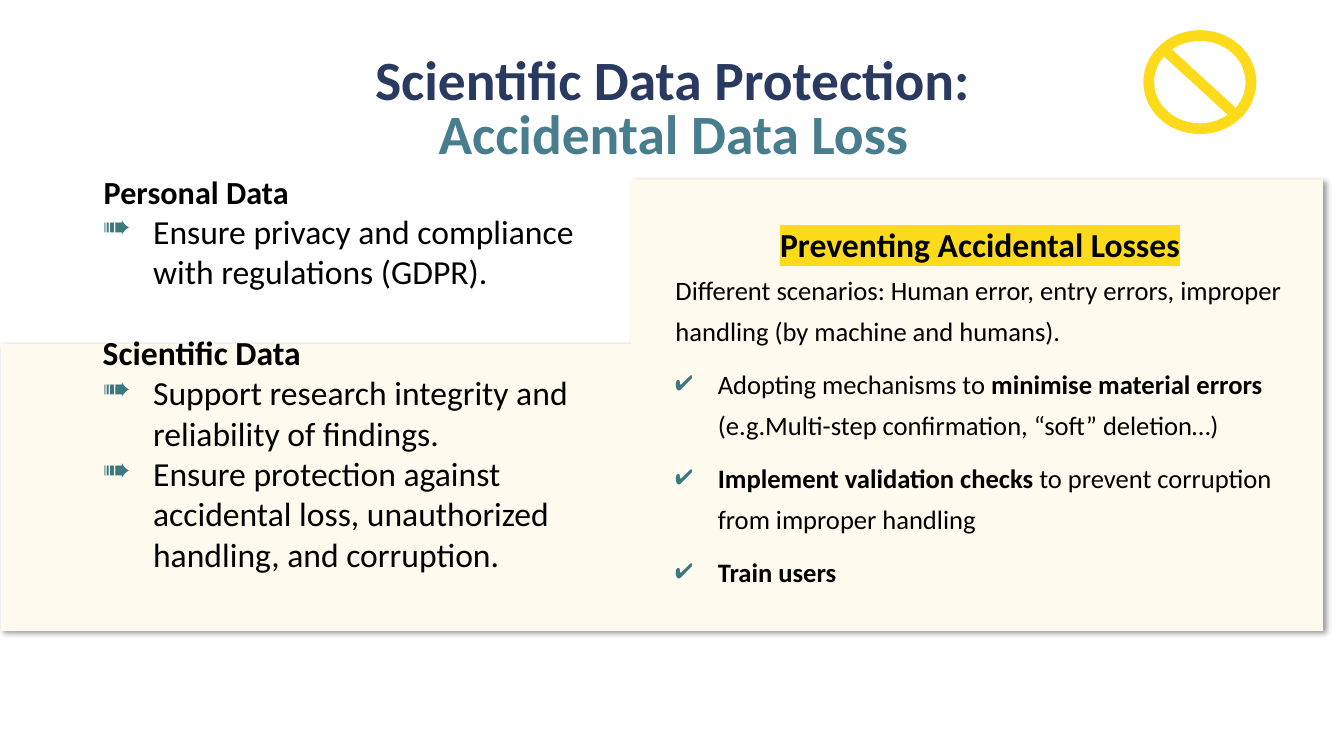
"""Build the slide on protecting scientific data from accidental loss."""
from dataclasses import dataclass

from lxml.etree import SubElement
from pptx import Presentation
from pptx.dml.color import RGBColor as Rgb
from pptx.enum.shapes import MSO_SHAPE as Preset
from pptx.enum.text import MSO_ANCHOR as Anchor, PP_ALIGN as Align
from pptx.oxml import parse_xml
from pptx.oxml.ns import nsdecls, qn
from pptx.shapes.autoshape import Shape
from pptx.slide import Slide
from pptx.text.text import TextFrame
from pptx.util import Inches, Pt


@dataclass(frozen=True)
class Theme:
    font: str = "Calibri"
    navy: str = "2A3960"
    teal: str = "487D8E"
    bullet: str = "3D7780"
    ink: str = "000000"
    cream: str = "FEFAEE"
    yellow: str = "FDDB1B"
    title_size: float = 39.6
    heading_size: float = 23
    body_size: float = 24
    detail_size: float = 19


THEME = Theme()


@dataclass(frozen=True)
class Box:
    left: float
    top: float
    width: float
    height: float

    def lengths(self) -> tuple[int, ...]:
        return tuple(Inches(v) for v in (self.left, self.top, self.width, self.height))


@dataclass(frozen=True)
class Line:
    """One paragraph, with bold parts between asterisks."""
    text: str
    size: float = THEME.body_size
    color: str = THEME.ink
    align: Align = Align.LEFT
    spacing: float = 1.0
    before: float = 0
    margin: float = 0
    bullet: str = ""
    highlight: str = ""


@dataclass(frozen=True)
class TextBlock:
    box: Box
    lines: tuple[Line, ...]
    inset_x: float = 0.1
    inset_y: float = 0.05
    anchor: Anchor = Anchor.TOP


def title(text: str, color: str, left: float, top: float) -> TextBlock:
    heading = Line(f"*{text}*", THEME.title_size, color, Align.CENTER, 0.9)
    return TextBlock(Box(left, top, 10.24, 0.56), (heading,), anchor=Anchor.MIDDLE)


def goal(text: str) -> Line:
    return Line(text, margin=0.5, bullet="➠")


def measure(text: str) -> Line:
    return Line(text, THEME.detail_size, spacing=1.3, before=8, margin=0.42, bullet="✔")


PANEL = Box(0.01, 1.78, 13.11, 4.48)
SIGN = Box(11.34, 0.3, 1.12, 1.03)
BLOCKS = (
    title("Scientific Data Protection:", THEME.navy, 1.55, 0.54),
    title("Accidental Data Loss", THEME.teal, 1.56, 1.07),
    TextBlock(Box(0.92, 1.62, 5.75, 4.63), (
        Line("*Personal Data*", THEME.heading_size, spacing=1.1, margin=0.01),
        goal("Ensure privacy and compliance \nwith regulations (GDPR)."),
        Line("*Scientific Data*", before=29),
        goal("Support research integrity and reliability of findings."),
        goal("Ensure protection against \naccidental loss, unauthorized handling, and corruption."),
    )),
    TextBlock(Box(6.57, 2.07, 6.3, 4.79), (
        Line("*Preventing Accidental Losses*", align=Align.CENTER, spacing=1.2,
             highlight=THEME.yellow),
        Line("Different scenarios: Human error, entry errors, improper handling "
             "(by machine and humans).", THEME.detail_size, spacing=1.3),
        measure("Adopting mechanisms to *minimise material errors *"
                "(e.g.Multi-step confirmation, “soft” deletion…)"),
        measure("*Implement validation checks *to prevent corruption from improper handling"),
        measure("*Train users*"),
    ), inset_x=0.13, inset_y=0.07),
)


def write_line(frame: TextFrame, line: Line, first: bool) -> None:
    paragraph = frame.paragraphs[0] if first else frame.add_paragraph()
    paragraph.alignment = line.align
    paragraph.line_spacing = line.spacing
    paragraph.space_before = Pt(line.before)
    properties = paragraph._p.get_or_add_pPr()
    properties.set("marL", str(Inches(line.margin)))
    if line.bullet:
        properties.set("indent", str(-Inches(line.margin)))
        tint = SubElement(properties, qn("a:buClr"))
        SubElement(tint, qn("a:srgbClr"), val=THEME.bullet)
        SubElement(properties, qn("a:buChar"), char=line.bullet)
    font = paragraph.font
    font.name, font.size = THEME.font, Pt(line.size)
    font.color.rgb = Rgb.from_string(line.color)
    for part_index, part in enumerate(line.text.split("*")):
        for row_index, row in enumerate(part.split("\n")):
            if row_index:
                paragraph.add_line_break()
            if not row:
                continue
            run = paragraph.add_run()
            run.text = row
            run.font.bold = part_index % 2 == 1
            if line.highlight:
                marker = SubElement(run._r.get_or_add_rPr(), qn("a:highlight"))
                SubElement(marker, qn("a:srgbClr"), val=line.highlight)


def add_block(slide: Slide, block: TextBlock) -> None:
    frame = slide.shapes.add_textbox(*block.box.lengths()).text_frame
    frame.word_wrap = True
    frame.vertical_anchor = block.anchor
    frame.margin_left = frame.margin_right = Inches(block.inset_x)
    frame.margin_top = frame.margin_bottom = Inches(block.inset_y)
    for index, line in enumerate(block.lines):
        write_line(frame, line, index == 0)


def add_preset(slide: Slide, preset: Preset, box: Box, color: str,
               adjustments: tuple[float, ...]) -> Shape:
    shape = slide.shapes.add_shape(preset, *box.lengths())
    shape.shadow.inherit = False
    shape.fill.solid()
    shape.fill.fore_color.rgb = Rgb.from_string(color)
    shape.line.fill.background()
    for index, value in enumerate(adjustments):
        shape.adjustments[index] = value
    return shape


def add_panel(slide: Slide) -> None:
    panel = add_preset(slide, Preset.CORNER, PANEL, THEME.cream, (0.636, 1.531))
    shape_properties = panel._element.spPr
    shape_properties.find(qn("a:xfrm")).set("flipH", "1")
    shape_properties.find(qn("a:effectLst")).append(parse_xml(
        f'<a:outerShdw {nsdecls("a")} blurRad="{Pt(4)}" dist="{Pt(3)}" dir="2700000" '
        f'algn="tl" rotWithShape="0"><a:srgbClr val="{THEME.ink}">'
        '<a:alpha val="40000"/></a:srgbClr></a:outerShdw>'))


def main() -> None:
    deck = Presentation()
    deck.slide_width, deck.slide_height = Inches(13.33), Inches(7.5)
    slide = deck.slides.add_slide(deck.slide_layouts[6])
    add_panel(slide)
    for block in BLOCKS:
        add_block(slide, block)
    add_preset(slide, Preset.NO_SYMBOL, SIGN, THEME.yellow, (0.103,))
    deck.save("out.pptx")


if __name__ == "__main__":
    main()
